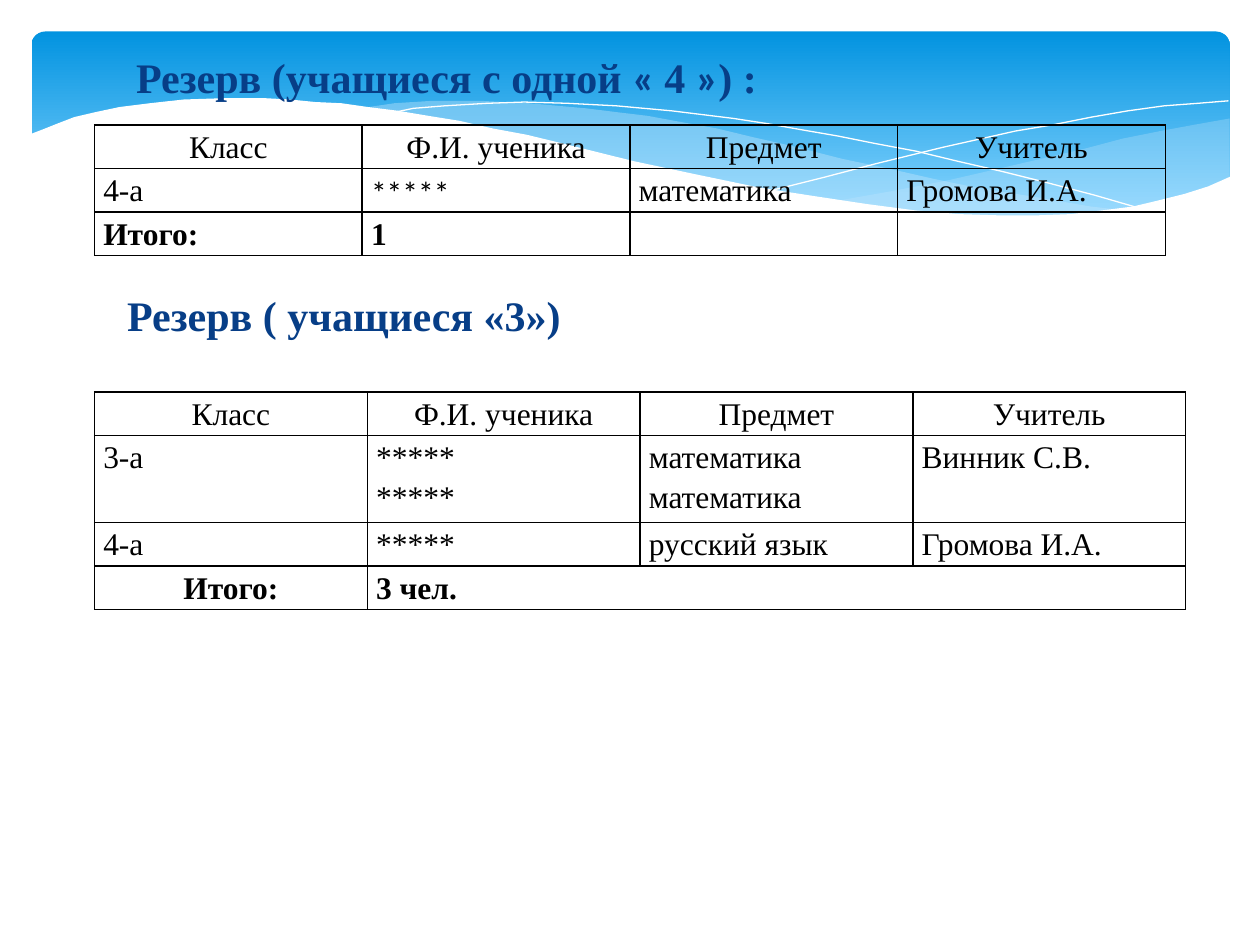
from lxml.etree import SubElement
from pptx import Presentation
from pptx.dml.color import RGBColor
from pptx.enum.shapes import MSO_SHAPE
from pptx.enum.text import MSO_ANCHOR, MSO_AUTO_SIZE, PP_ALIGN
from pptx.oxml.ns import qn
from pptx.util import Inches, Pt

COLORS = {"top": "0293E0", "bottom": "83D3FE", "wave": "C6E7FC",
          "white": "FFFFFF", "heading": "073E87", "text": "000000"}
SERIF, SANS = "Times New Roman", "Calibri"

TITLE_RUNS = [("Резерв (учащиеся с одной ", SERIF), ("« ", SANS), ("4 ", SERIF),
              ("»", SANS), (") :", SERIF)]
SUBTITLE_RUNS = [("Резерв ( учащиеся «3»)", SERIF)]
HEADER = ["Класс", "Ф.И. ученика", "Предмет", "Учитель"]
TABLES = [
    {"at": (0.75, 0.99), "width": 8.5, "star_font": SANS, "total_align": PP_ALIGN.LEFT,
     "merge_total": False,
     "rows": [HEADER, ["4-а", "*****", "математика", "Громова И.А."],
              ["Итого:", "1", "", ""]]},
    {"at": (0.75, 3.11), "width": 8.66, "star_font": SERIF, "total_align": PP_ALIGN.CENTER,
     "merge_total": True,
     "rows": [HEADER,
              ["3-а", "*****\n*****", "математика\nматематика", "Винник С.В."],
              ["4-а", "*****", "русский язык", "Громова И.А."],
              ["Итого:", "3 чел.", "", ""]]},
]
LINE_HEIGHT = 0.34

RIGHT_WAVE = [
    (9.76, 0.94), (9.48, 0.99), (9.21, 1.04), (8.91, 1.1), (8.61, 1.18), (8.05, 1.31),
    (7.53, 1.43), (7.06, 1.52), (6.61, 1.6), (6.91, 1.64), (7.19, 1.67), (7.45, 1.69),
    (7.69, 1.71), (7.92, 1.72), (8.35, 1.72), (8.63, 1.7), (8.89, 1.66), (9.13, 1.62),
    (9.35, 1.56), (9.63, 1.47), (9.76, 1.41)]
MIDDLE_WAVE = [
    (8.93, 1.67), (8.66, 1.64), (8.37, 1.59), (8.07, 1.54), (7.75, 1.49), (7.41, 1.42),
    (7.06, 1.34), (6.68, 1.26), (6.29, 1.16), (5.98, 1.09), (5.69, 1.02), (5.41, 0.97),
    (5.14, 0.92), (4.89, 0.89), (4.65, 0.86), (4.2, 0.82), (3.8, 0.8), (3.44, 0.8),
    (3.13, 0.82), (2.86, 0.86), (3.23, 0.9), (3.62, 0.97), (4.04, 1.06), (4.49, 1.16),
    (4.91, 1.26), (5.3, 1.35), (5.66, 1.43), (6.01, 1.5), (6.34, 1.56), (6.65, 1.61),
    (6.95, 1.65), (7.22, 1.68), (7.48, 1.7), (7.73, 1.72), (8.07, 1.73), (8.38, 1.72),
    (8.67, 1.7)]
FALLING_LINE = [
    (3.09, 0.9), (3.28, 0.86), (3.53, 0.84), (3.87, 0.82), (4.16, 0.81), (4.5, 0.82),
    (4.89, 0.84), (5.33, 0.88), (5.82, 0.94), (6.08, 0.98), (6.36, 1.03), (6.65, 1.08),
    (6.95, 1.14), (7.27, 1.2), (7.6, 1.28), (7.95, 1.36), (8.31, 1.45), (8.69, 1.55),
    (9.07, 1.66)]
RISING_LINE = [
    (6.13, 1.51), (6.53, 1.41), (6.95, 1.3), (7.48, 1.17), (8.06, 1.04), (8.36, 0.99),
    (8.66, 0.93), (8.95, 0.88), (9.24, 0.84), (9.51, 0.82), (9.75, 0.8)]
WHITE_WAVE = [
    (9.77, 1.4), (9.59, 1.48), (9.4, 1.54), (9.2, 1.59), (8.99, 1.64), (8.75, 1.67),
    (8.5, 1.7), (8.23, 1.71), (7.93, 1.71), (7.61, 1.7), (7.26, 1.67), (6.88, 1.62),
    (6.48, 1.56), (6.03, 1.49), (5.55, 1.39), (5.03, 1.28), (4.47, 1.14), (4.18, 1.07),
    (3.91, 1.02), (3.65, 0.96), (3.4, 0.92), (3.16, 0.88), (2.92, 0.85), (2.71, 0.82),
    (2.5, 0.81), (2.3, 0.79), (2.11, 0.78), (1.77, 0.78), (1.46, 0.79), (1.19, 0.82),
    (0.95, 0.85), (0.76, 0.89), (0.59, 0.93), (0.46, 0.98), (0.36, 1.02), (0.23, 1.07),
    (0.23, 2.24), (9.77, 2.24)]


def color(name):
    return RGBColor.from_string(COLORS[name])


def add_backdrop(slide):
    banner = slide.shapes.add_shape(MSO_SHAPE.ROUNDED_RECTANGLE, Inches(0.25), Inches(0.25),
                                    Inches(9.51), Inches(1.56))
    banner.adjustments[0] = 0.07
    banner.shadow.inherit = False
    banner.line.fill.background()
    banner.fill.gradient()
    banner.fill.gradient_angle = 270
    for stop, position, name in zip(banner.fill.gradient_stops, (0, 0.9), ("top", "bottom")):
        stop.position = position
        stop.color.rgb = color(name)


def add_outline(slide, points, closed):
    corners = [(Inches(x), Inches(y)) for x, y in points]
    builder = slide.shapes.build_freeform(*corners[0])
    builder.add_line_segments(corners[1:], close=closed)
    outline = builder.convert_to_shape()
    outline.shadow.inherit = False
    return outline


def add_wave(slide, points, name, opacity):
    wave = add_outline(slide, points, True)
    wave.line.fill.background()
    wave.fill.solid()
    wave.fill.fore_color.rgb = color(name)
    if opacity < 100:
        tint = wave.element.spPr.find(qn("a:solidFill"))[0]
        SubElement(tint, qn("a:alpha"), val=str(opacity * 1000))


def add_thin_line(slide, points):
    curve = add_outline(slide, points, False)
    curve.fill.background()
    curve.line.color.rgb = color("white")
    curve.line.width = Pt(0)


def add_span(para, text, font, size, name, bold):
    span = para.add_run()
    span.text = text
    span.font.name = font
    span.font.size = Pt(size)
    span.font.bold = bold
    span.font.color.rgb = color(name)


def fill_heading(box, runs, left, top, width):
    box.left, box.top, box.width, box.height = map(Inches, (left, top, width, 0.5))
    frame = box.text_frame
    frame.word_wrap = False
    frame.auto_size = MSO_AUTO_SIZE.SHAPE_TO_FIT_TEXT
    frame.vertical_anchor = MSO_ANCHOR.TOP
    para = frame.paragraphs[0]
    para.alignment = PP_ALIGN.LEFT
    for text, font in runs:
        add_span(para, text, font, 24, "heading", True)


def add_borders(cell):
    properties = cell._tc.get_or_add_tcPr()
    for index, side in enumerate(("lnL", "lnR", "lnT", "lnB")):
        border = SubElement(properties, qn(f"a:{side}"), w=str(Pt(1)))
        paint = SubElement(border, qn("a:solidFill"))
        SubElement(paint, qn("a:srgbClr"), val=COLORS["text"])
        properties.insert(index, border)


def fill_cell(cell, text, font, align, bold):
    cell.margin_left = cell.margin_right = Inches(0.07)
    cell.margin_top = cell.margin_bottom = 0
    cell.fill.background()
    add_borders(cell)
    for index, line in enumerate(text.split("\n")):
        para = cell.text_frame.paragraphs[0] if index == 0 else cell.text_frame.add_paragraph()
        para.alignment = align
        para.line_spacing = 1.15
        if line:
            add_span(para, line, font, 18, "text", bold)


def add_register(slide, register):
    rows = register["rows"]
    heights = [LINE_HEIGHT * max(text.count("\n") + 1 for text in row) for row in rows]
    left, top = register["at"]
    table = slide.shapes.add_table(len(rows), len(HEADER), Inches(left), Inches(top),
                                   Inches(register["width"]), Inches(sum(heights))).table
    table.first_row = table.horz_banding = False
    last = len(rows) - 1
    for r, row in enumerate(rows):
        table.rows[r].height = Inches(heights[r])
        for c, text in enumerate(row):
            align = PP_ALIGN.CENTER if r == 0 else PP_ALIGN.LEFT
            if r == last and c == 0:
                align = register["total_align"]
            font = register["star_font"] if text.startswith("*") else SERIF
            fill_cell(table.cell(r, c), text, font, align, r == last)
    if register["merge_total"]:
        table.cell(last, 1).merge(table.cell(last, len(HEADER) - 1))


def main():
    deck = Presentation()
    deck.slide_width, deck.slide_height = Inches(10), Inches(7.5)
    page = deck.slides.add_slide(deck.slide_layouts[5])
    add_backdrop(page)
    add_wave(page, RIGHT_WAVE, "wave", 29)
    add_wave(page, MIDDLE_WAVE, "wave", 40)
    add_thin_line(page, FALLING_LINE)
    add_thin_line(page, RISING_LINE)
    add_wave(page, WHITE_WAVE, "white", 100)
    title = page.shapes.title
    title.element.getparent().append(title.element)
    fill_heading(title, TITLE_RUNS, 0.98, 0.36, 5.26)
    fill_heading(page.shapes.add_textbox(0, 0, 0, 0), SUBTITLE_RUNS, 0.91, 2.25, 3.68)
    for register in TABLES:
        add_register(page, register)
    deck.save("out.pptx")


if __name__ == "__main__":
    main()
